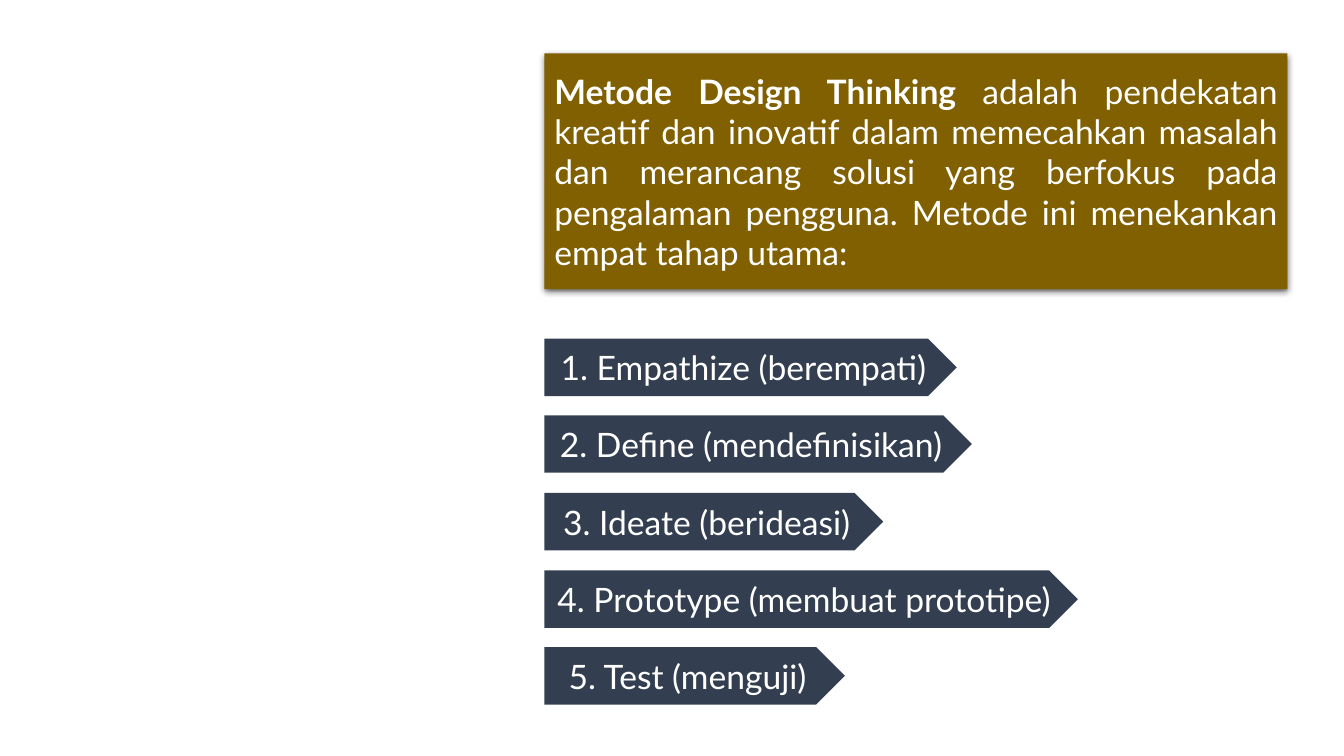
from lxml.etree import SubElement
from pptx import Presentation
from pptx.dml.color import RGBColor
from pptx.enum.shapes import MSO_SHAPE as Shape
from pptx.enum.text import MSO_ANCHOR as Anchor, PP_ALIGN as Align
from pptx.oxml.ns import qn
from pptx.util import Pt

PX = 9144  # 100 px to the inch
GOLD = RGBColor(0x80, 0x60, 0x00)
NAVY = RGBColor(0x33, 0x3F, 0x50)
WHITE = RGBColor(0xFF, 0xFF, 0xFF)

LEFT = 540
TERM = "Metode Design Thinking "
INTRO = ("adalah pendekatan kreatif dan inovatif dalam memecahkan masalah "
         "dan merancang solusi yang berfokus pada pengalaman pengguna. "
         "Metode ini menekankan empat tahap utama:")
STEPS = [
    ("1. Empathize (berempati)", 409),
    ("2. Define (mendefinisikan)", 424),
    ("3. Ideate (berideasi)", 336),
    ("4. Prototype (membuat prototipe)", 529),
    ("5. Test (menguji)", 298),
]


def add_box(slide, kind, top, width, height, fill):
    box = slide.shapes.add_shape(
        kind, LEFT * PX, top * PX, width * PX, height * PX)
    box.shadow.inherit = False
    box.fill.solid()
    box.fill.fore_color.rgb = fill
    box.line.fill.background()
    box.text_frame.word_wrap = True
    box.text_frame.vertical_anchor = Anchor.MIDDLE
    return box


def add_text(box, text, bold=False, align=Align.CENTER):
    """Append a run to the first paragraph of the box."""
    para = box.text_frame.paragraphs[0]
    para.alignment = align
    run = para.add_run()
    run.text = text
    font = run.font
    font.name, font.size, font.bold = "Lato", Pt(24), bold
    font.color.rgb = WHITE


def add_shade(box):
    """Give the box a soft black shadow that falls straight down."""
    effects = box.fill._xPr.find(qn("a:effectLst"))
    shade = SubElement(effects, qn("a:outerShdw"), blurRad=str(Pt(4.5)),
                       dist=str(Pt(1.5)), dir="5400000", algn="ctr",
                       rotWithShape="0")
    black = SubElement(shade, qn("a:srgbClr"), val="000000")
    SubElement(black, qn("a:alpha"), val="63000")


def add_intro(slide):
    box = add_box(slide, Shape.RECTANGLE, 53, 737, 234, GOLD)
    add_shade(box)
    add_text(box, TERM, bold=True, align=Align.JUSTIFY)
    add_text(box, INTRO, align=Align.JUSTIFY)


def add_steps(slide):
    first, last = 336, 642
    pitch = (last - first) / (len(STEPS) - 1)
    for i, (label, width) in enumerate(STEPS):
        top = round(first + i * pitch)
        box = add_box(slide, Shape.PENTAGON, top, width, 57, NAVY)
        add_text(box, label)


def main():
    deck = Presentation()
    deck.slide_width, deck.slide_height = 1333 * PX, 750 * PX
    slide = deck.slides.add_slide(deck.slide_layouts[6])
    add_intro(slide)
    add_steps(slide)
    deck.save("out.pptx")


if __name__ == "__main__":
    main()
